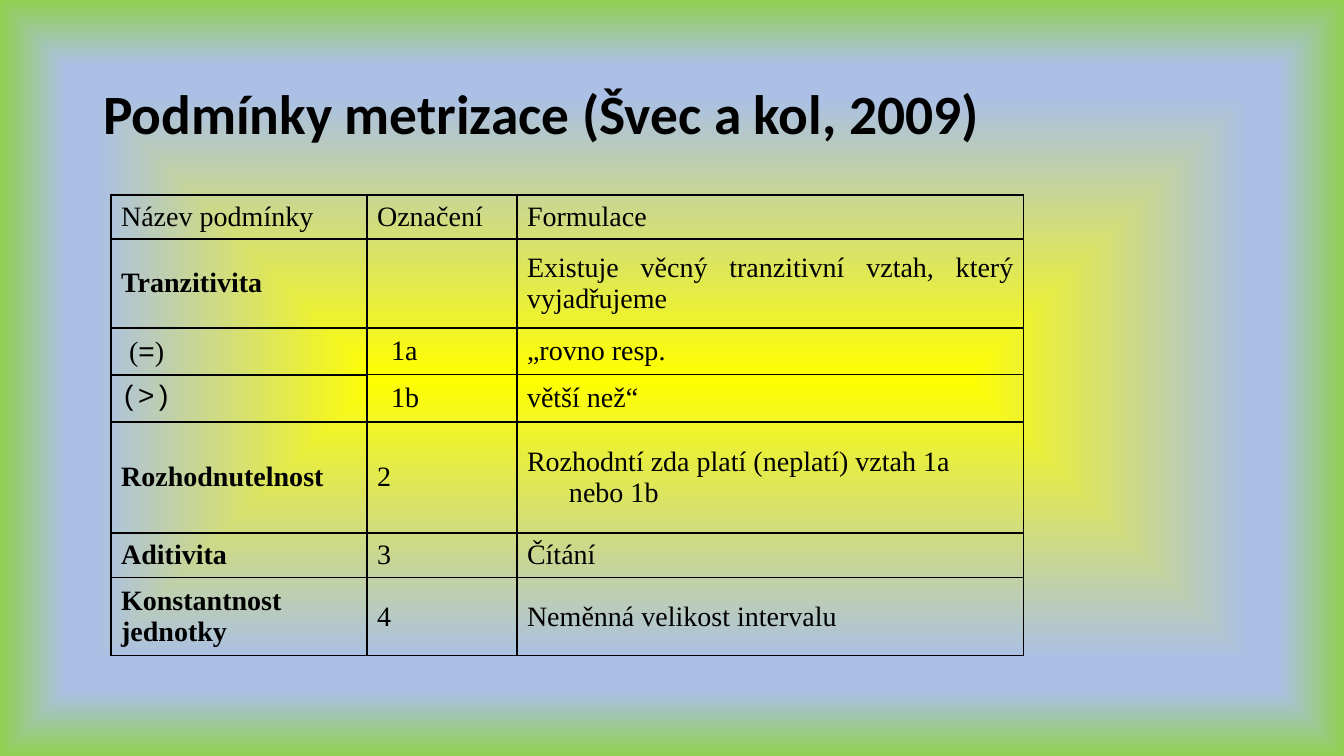
"""Build the slide on the conditions of metrization."""
from lxml.etree import SubElement
from pptx import Presentation
from pptx.dml.color import RGBColor
from pptx.enum.text import MSO_ANCHOR, MSO_AUTO_SIZE, PP_ALIGN
from pptx.oxml import parse_xml
from pptx.oxml.ns import nsdecls, qn
from pptx.util import Emu, Pt

PX = 914400 / 100.8
BLACK = RGBColor(0, 0, 0)
YELLOW = RGBColor(0xFF, 0xFF, 0x00)
BLUE = RGBColor(0xAB, 0xC0, 0xE4)
GREEN = RGBColor(0x92, 0xD0, 0x50)
SERIF = "Times New Roman"

TITLE = "Podmínky metrizace (Švec a kol, 2009)"
TITLE_BOX = (93, 78, 1159, 77)
BACKGROUND = [(0, YELLOW), (74, BLUE), (83, BLUE), (100, GREEN)]

HEADINGS = ["Název podmínky", "Označení", "Formulace"]
CONDITIONS = [
    ["Tranzitivita", "", "Existuje věcný tranzitivní vztah, který vyjadřujeme"],
    ["(=)", "1a", "„rovno resp."],
    ["(>)", "1b", "větší než“"],
    ["Rozhodnutelnost", "2", "Rozhodntí zda platí (neplatí) vztah 1a\nnebo 1b"],
    ["Aditivita", "3", "Čítání"],
    ["Konstantnost jednotky", "4", "Neměnná velikost intervalu"],
]
SYMBOL_RUNS = {
    "(=)": [("(", SERIF), ("=", "Arial"), (")", SERIF)],
    "(>)": [("(>)", "Courier New")],
}
INDENTS = {"(=)": 8, "1a": 14, "1b": 14, "nebo 1b": 42}
TABLE_ORIGIN = (111, 195)
COLUMN_WIDTHS = [256, 150, 507]
ROW_HEIGHTS = [44, 89, 47, 47, 111, 45, 78]
RELATION_ROWS = (2, 3)


def px(length):
    return Emu(round(length * PX))


def add_run(paragraph, text, font, size, bold):
    run = paragraph.add_run()
    run.text = text
    run.font.name = font
    run.font.size = Pt(size)
    run.font.bold = bold
    run.font.color.rgb = BLACK


def paint_background(slide):
    stops = "".join(
        f'<a:gs pos="{position * 1000}"><a:srgbClr val="{color}"/></a:gs>'
        for position, color in BACKGROUND)
    background = parse_xml(
        f'<p:bg {nsdecls("p", "a")}><p:bgPr><a:gradFill rotWithShape="1">'
        f'<a:gsLst>{stops}</a:gsLst><a:path path="shape">'
        '<a:fillToRect l="50000" t="50000" r="50000" b="50000"/></a:path>'
        '</a:gradFill><a:effectLst/></p:bgPr></p:bg>')
    slide.element.cSld.insert(0, background)


def add_title(slide):
    title = slide.shapes.title
    title.left, title.top, title.width, title.height = map(px, TITLE_BOX)
    frame = title.text_frame
    frame.word_wrap = True
    frame.auto_size = MSO_AUTO_SIZE.NONE
    frame.vertical_anchor = MSO_ANCHOR.MIDDLE
    paragraph = frame.paragraphs[0]
    paragraph.alignment = PP_ALIGN.LEFT
    paragraph.line_spacing = 0.9
    add_run(paragraph, TITLE, "Calibri", 39.6, True)


def draw_borders(cell, thin_side):
    properties = cell._tc.get_or_add_tcPr()
    for place, side in enumerate(("lnL", "lnR", "lnT", "lnB")):
        width = Pt(0.75 if side == thin_side else 1)
        border = SubElement(properties, qn(f"a:{side}"), w=str(width))
        fill = SubElement(border, qn("a:solidFill"))
        SubElement(fill, qn("a:srgbClr"), val=str(BLACK))
        properties.insert(place, border)


def write_cell(cell, content, bold):
    cell.vertical_anchor = MSO_ANCHOR.MIDDLE
    frame = cell.text_frame
    for number, line in enumerate(content.split("\n")):
        paragraph = frame.add_paragraph() if number else frame.paragraphs[0]
        paragraph.alignment = PP_ALIGN.JUSTIFY
        if line in INDENTS:
            paragraph._p.get_or_add_pPr().set("marL", str(px(INDENTS[line])))
        if line:
            for text, font in SYMBOL_RUNS.get(line, [(line, SERIF)]):
                add_run(paragraph, text, font, 20, bold)


def add_conditions(slide):
    rows = [HEADINGS] + CONDITIONS
    size = (sum(COLUMN_WIDTHS), sum(ROW_HEIGHTS))
    table = slide.shapes.add_table(
        len(rows), len(HEADINGS), *map(px, TABLE_ORIGIN + size)).table
    table.first_row = table.horz_banding = False
    for column, width in zip(table.columns, COLUMN_WIDTHS):
        column.width = px(width)
    for row, height in zip(table.rows, ROW_HEIGHTS):
        row.height = px(height)
    thin_sides = dict(zip(RELATION_ROWS, ("lnB", "lnT")))
    for r, contents in enumerate(rows):
        for c, content in enumerate(contents):
            cell = table.cell(r, c)
            bold = c == 0 and r > 0 and content not in SYMBOL_RUNS
            write_cell(cell, content, bold)
            cell.fill.background()
            draw_borders(cell, thin_sides.get(r) if c else None)


def main():
    deck = Presentation()
    deck.slide_width, deck.slide_height = px(1344), px(756)
    slide = deck.slides.add_slide(deck.slide_layouts[5])
    paint_background(slide)
    add_title(slide)
    add_conditions(slide)
    deck.save("out.pptx")


if __name__ == "__main__":
    main()
